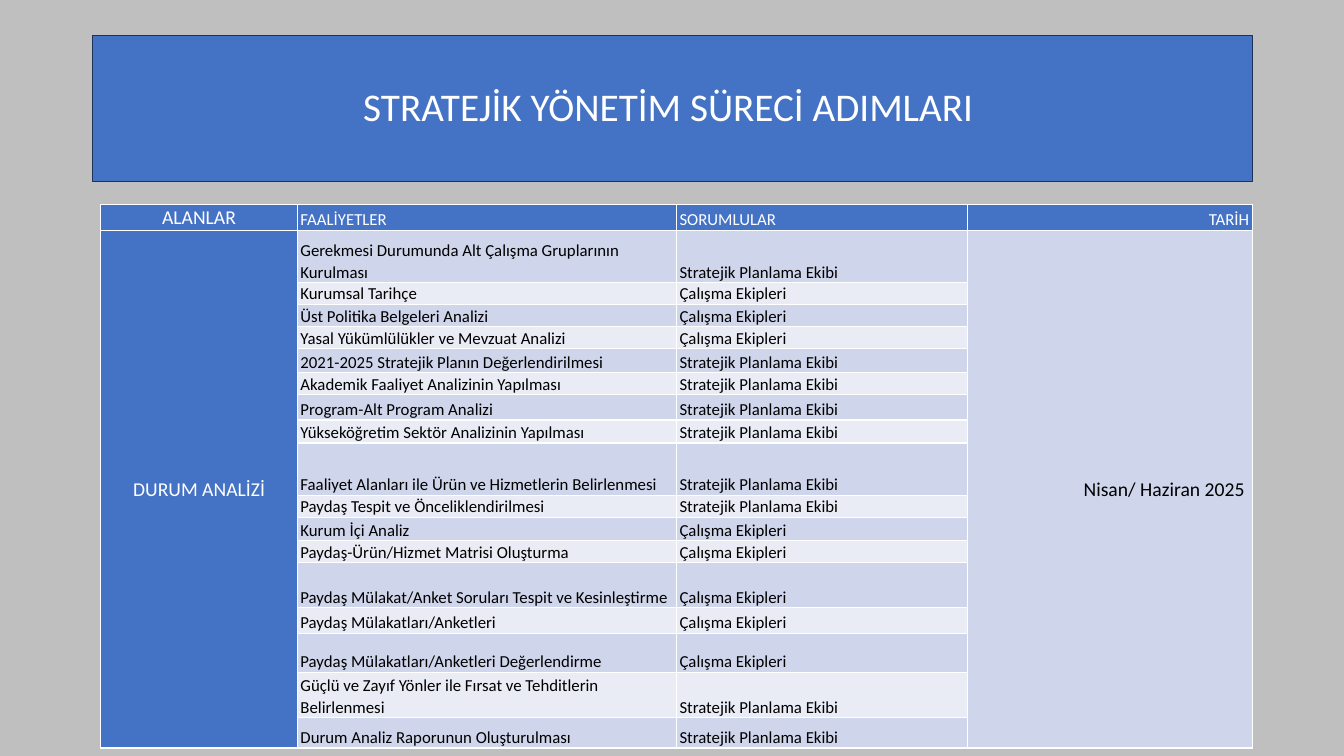
from dataclasses import dataclass

from pptx import Presentation
from pptx.dml.color import RGBColor
from pptx.enum.text import MSO_ANCHOR, PP_ALIGN
from pptx.util import Inches, Pt

TITLE = "STRATEJİK YÖNETİM SÜRECİ ADIMLARI "
HEADERS = ["ALANLAR", "FAALİYETLER", "SORUMLULAR", "TARİH"]
AREA = "DURUM ANALİZİ"
DATE = "Nisan/ Haziran 2025 "
PLANNING = "Stratejik Planlama Ekibi"
WORKING = "Çalışma Ekipleri"
# activity, responsible team, row height
ACTIVITIES = [
    ("Gerekmesi Durumunda Alt Çalışma Gruplarının Kurulması", PLANNING, 0.52),
    ("Kurumsal Tarihçe", WORKING, 0.21),
    ("Üst Politika Belgeleri Analizi", WORKING, 0.22),
    ("Yasal Yükümlülükler ve Mevzuat Analizi", WORKING, 0.21),
    ("2021-2025 Stratejik Planın Değerlendirilmesi", PLANNING, 0.24),
    ("Akademik Faaliyet Analizinin Yapılması", PLANNING, 0.21),
    ("Program-Alt Program Analizi", PLANNING, 0.25),
    ("Yükseköğretim Sektör Analizinin Yapılması", PLANNING, 0.23),
    ("Faaliyet Alanları ile Ürün ve Hizmetlerin Belirlenmesi", PLANNING, 0.52),
    ("Paydaş Tespit ve Önceliklendirilmesi", PLANNING, 0.21),
    ("Kurum İçi Analiz", WORKING, 0.23),
    ("Paydaş-Ürün/Hizmet Matrisi Oluşturma", WORKING, 0.21),
    ("Paydaş Mülakat/Anket Soruları Tespit ve Kesinleştirme", WORKING, 0.45),
    ("Paydaş Mülakatları/Anketleri", WORKING, 0.25),
    ("Paydaş Mülakatları/Anketleri Değerlendirme", WORKING, 0.39),
    ("Güçlü ve Zayıf Yönler ile Fırsat ve Tehditlerin Belirlenmesi", PLANNING, 0.45),
    ("Durum Analiz Raporunun Oluşturulması", PLANNING, 0.3),
]
HEADER_HEIGHT = 0.25
COLUMN_WIDTHS = [1.95, 3.76, 2.89, 2.82]


@dataclass(frozen=True)
class Theme:
    font: str = "Calibri"
    background: RGBColor = RGBColor(0xBF, 0xBF, 0xBF)
    accent: RGBColor = RGBColor(0x44, 0x72, 0xC4)
    outline: RGBColor = RGBColor(0x1E, 0x32, 0x56)
    bands: tuple = (RGBColor(0xCF, 0xD5, 0xEA), RGBColor(0xE9, 0xEB, 0xF5))
    light: RGBColor = RGBColor(0xFF, 0xFF, 0xFF)
    dark: RGBColor = RGBColor(0, 0, 0)
    title: int = 28
    large: int = 14
    body: int = 12


THEME = Theme()


def paint(target, color):
    target.fill.solid()
    target.fill.fore_color.rgb = color


def write(tf, text, size, color, align, spacing):
    p = tf.paragraphs[0]
    p.text = text
    p.alignment = align
    p.line_spacing = spacing
    font = p.runs[0].font
    font.name, font.size, font.bold = THEME.font, Pt(size), False
    font.color.rgb = color


def fill_cell(cell, text, fill, color, size=THEME.body,
              align=PP_ALIGN.LEFT, anchor=MSO_ANCHOR.BOTTOM):
    paint(cell, fill)
    cell.margin_left = cell.margin_right = Inches(0.03)
    cell.margin_top = cell.margin_bottom = 0
    cell.vertical_anchor = anchor
    write(cell.text_frame, text, size, color, align, 1.07)


def add_title(slide):
    sp = slide.shapes.title
    sp.left, sp.top = Inches(0.92), Inches(0.35)
    sp.width, sp.height = Inches(11.5), Inches(1.45)
    paint(sp, THEME.accent)
    sp.line.color.rgb = THEME.outline
    sp.line.width = Pt(1)
    tf = sp.text_frame
    tf.vertical_anchor = MSO_ANCHOR.MIDDLE
    write(tf, TITLE, THEME.title, THEME.light, PP_ALIGN.CENTER, 0.9)


def add_schedule(slide):
    heights = [HEADER_HEIGHT] + [height for _, _, height in ACTIVITIES]
    table = slide.shapes.add_table(
        len(heights), len(COLUMN_WIDTHS), Inches(1), Inches(2.03),
        Inches(sum(COLUMN_WIDTHS)), Inches(sum(heights))).table
    for column, width in zip(table.columns, COLUMN_WIDTHS):
        column.width = Inches(width)
    for row, height in zip(table.rows, heights):
        row.height = Inches(height)

    centred = {"size": THEME.large, "align": PP_ALIGN.CENTER, "anchor": MSO_ANCHOR.MIDDLE}
    header_styles = [centred, {}, {}, {"align": PP_ALIGN.RIGHT}]
    for col, (text, style) in enumerate(zip(HEADERS, header_styles)):
        fill_cell(table.cell(0, col), text, THEME.accent, THEME.light, **style)

    for row, (activity, team, _) in enumerate(ACTIVITIES, start=1):
        band = THEME.bands[(row - 1) % 2]
        fill_cell(table.cell(row, 1), activity, band, THEME.dark)
        fill_cell(table.cell(row, 2), team, band, THEME.dark)

    last = len(ACTIVITIES)
    for col in (0, 3):
        table.cell(1, col).merge(table.cell(last, col))
    fill_cell(table.cell(1, 0), AREA, THEME.accent, THEME.light, **centred)
    fill_cell(table.cell(1, 3), DATE, THEME.bands[0], THEME.dark, THEME.large,
              PP_ALIGN.RIGHT, MSO_ANCHOR.MIDDLE)


def main():
    prs = Presentation()
    prs.slide_width, prs.slide_height = Inches(13.33), Inches(7.5)
    slide = prs.slides.add_slide(prs.slide_layouts[5])
    paint(slide.background, THEME.background)
    add_title(slide)
    add_schedule(slide)
    prs.save("out.pptx")


if __name__ == "__main__":
    main()
